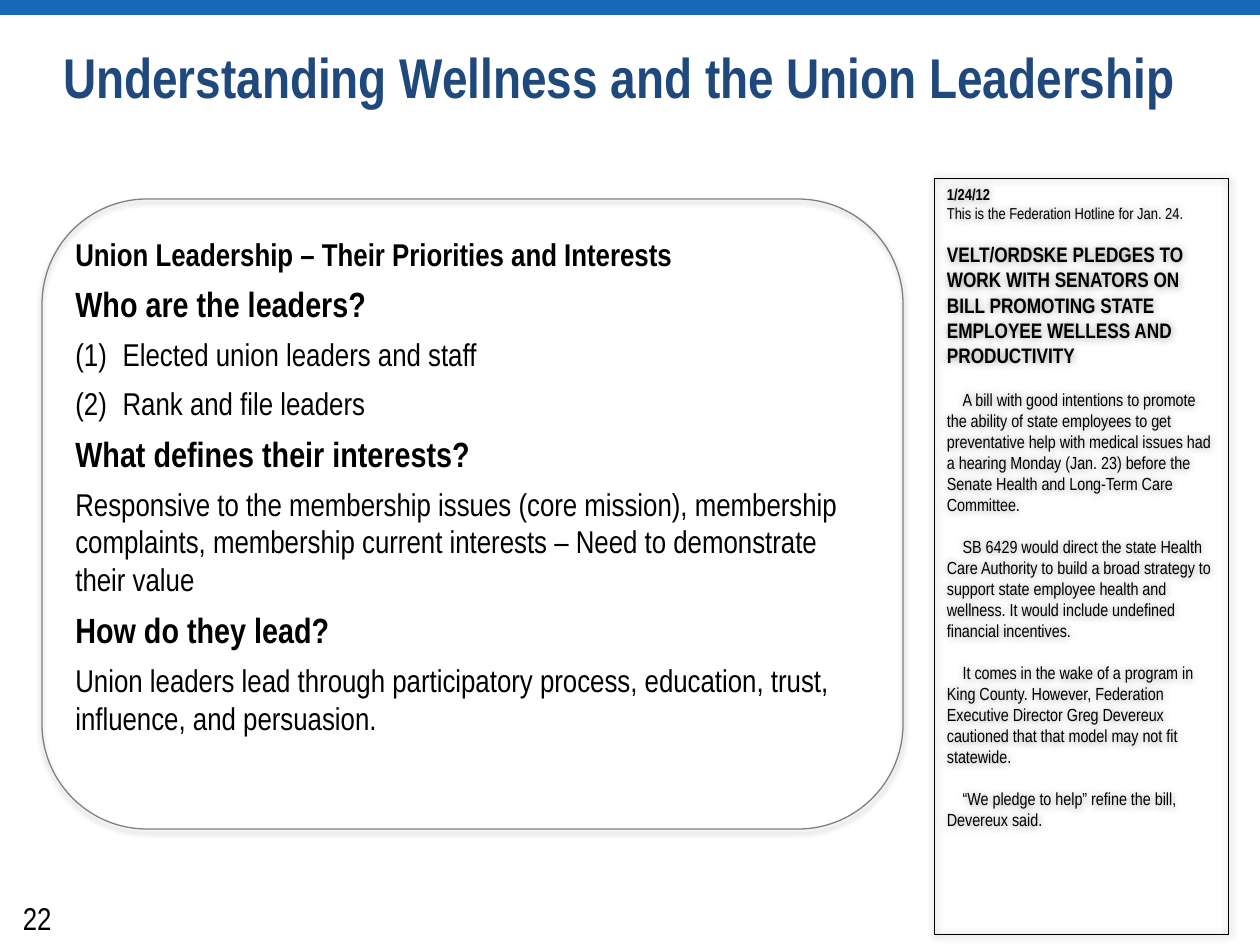
import dataclasses

import lxml.etree
import pptx
import pptx.dml.color
import pptx.enum.shapes
import pptx.enum.text
import pptx.oxml.ns
import pptx.util

Pt = pptx.util.Pt
Kind = pptx.enum.shapes.MSO_SHAPE
Anchor = pptx.enum.text.MSO_ANCHOR
qn = pptx.oxml.ns.qn


@dataclasses.dataclass(frozen=True)
class Theme:
    font: str = "Arial Narrow"
    bar: str = "1769B8"
    title: str = "1F497D"
    ink: str = "000000"
    frame: str = "808080"
    huge: int = 32
    head: int = 20
    body: int = 18
    lead: int = 12
    news: int = 10
    date: int = 9


THEME = Theme()

POINTS = [
    ("Union Leadership – Their Priorities and Interests", dict(bold=True)),
    ("Who are the leaders?", dict(size=THEME.head, bold=True)),
    ("Elected union leaders and staff", dict(number=True)),
    ("Rank and file leaders", dict(number=True)),
    ("What defines their interests?", dict(size=THEME.head, bold=True)),
    ("Responsive to the membership issues (core mission), membership complaints, "
     "membership current interests – Need to demonstrate their value", {}),
    ("How do they lead?", dict(size=THEME.head, bold=True)),
    ("Union leaders lead through participatory process, education, trust, "
     "influence, and persuasion.", {}),
]

STORY = [
    "A bill with good intentions to promote the ability of state employees to get "
    "preventative help with medical issues had a hearing Monday (Jan. 23) before "
    "the Senate Health and Long-Term Care Committee.",
    "SB 6429 would direct the state Health Care Authority to build a broad strategy "
    "to support state employee health and wellness. It would include undefined "
    "financial incentives.",
    "It comes in the wake of a program in King County. However, Federation Executive "
    "Director Greg Devereux cautioned that that model may not fit statewide.",
    "“We pledge to help” refine the bill, Devereux said.",
]


def rgb(code):
    return pptx.dml.color.RGBColor.from_string(code)


def write(frame, text, size=THEME.body, color=THEME.ink, bold=False,
          after=0, lines=None, first=0, number=False):
    """Add one paragraph, using the empty first one if it is still free."""
    para = frame.paragraphs[0]
    if para.runs:
        para = frame.add_paragraph()
    run = para.add_run()
    run.text = text
    run.font.name = THEME.font
    run.font.size = Pt(size)
    run.font.bold = bold
    run.font.color.rgb = rgb(color)
    para.alignment = pptx.enum.text.PP_ALIGN.LEFT
    para.space_after = Pt(after)
    if lines:
        para.line_spacing = lines
    props = para._p.get_or_add_pPr()
    if first:
        props.set("indent", str(Pt(first)))
    if number:
        props.set("marL", str(Pt(27)))
        props.set("indent", str(Pt(-27)))
        lxml.etree.SubElement(props, qn("a:buAutoNum"), type="arabicParenBoth")


def box(slide, area, anchor=Anchor.TOP):
    frame = slide.shapes.add_textbox(*map(Pt, area)).text_frame
    frame.word_wrap = True
    frame.vertical_anchor = anchor
    return frame


def panel(slide, kind, area, fill=None, line=None):
    shape = slide.shapes.add_shape(kind, *map(Pt, area))
    shape.shadow.inherit = False
    if fill:
        shape.fill.solid()
        shape.fill.fore_color.rgb = rgb(fill)
    else:
        shape.fill.background()
    if line:
        shape.line.color.rgb = rgb(line)
        shape.line.width = Pt(0.75)
    else:
        shape.line.fill.background()
    return shape


def shade(shape, alpha, blur, dist=0, angle=0):
    """Give the shape an outer shadow; alpha in percent, angle in degrees."""
    effects = shape._element.spPr.find(qn("a:effectLst"))
    outer = lxml.etree.SubElement(
        effects, qn("a:outerShdw"), blurRad=str(Pt(blur)), dist=str(Pt(dist)),
        dir=str(angle * 60000), rotWithShape="0")
    tint = lxml.etree.SubElement(outer, qn("a:srgbClr"), val=THEME.ink)
    lxml.etree.SubElement(tint, qn("a:alpha"), val=str(alpha * 1000))


def points(slide):
    card = panel(slide, Kind.ROUNDED_RECTANGLE, (24, 113.75, 492, 360),
                 line=THEME.frame)
    shade(card, 35, 3.1, 1.8, 90)
    frame = box(slide, (36, 130.5, 468, 397))
    for text, style in POINTS:
        write(frame, text, after=6, **style)


def hotline(slide):
    card = panel(slide, Kind.RECTANGLE, (534, 102, 168, 432), line=THEME.ink)
    shade(card, 40, 5)
    frame = card.text_frame
    frame.word_wrap = True
    frame.vertical_anchor = Anchor.TOP
    write(frame, "1/24/12", size=THEME.date, bold=True)
    write(frame, "This is the Federation Hotline for Jan. 24.",
          size=THEME.date, after=11)
    write(frame, "VELT/ORDSKE PLEDGES TO WORK WITH SENATORS ON BILL PROMOTING "
          "STATE EMPLOYEE WELLESS AND PRODUCTIVITY",
          size=THEME.lead, bold=True, after=12)
    for text in STORY:
        write(frame, text, size=THEME.news, first=9, after=12)


def main():
    deck = pptx.Presentation()
    deck.slide_width, deck.slide_height = Pt(720), Pt(540)
    slide = deck.slides.add_slide(deck.slide_layouts[6])
    panel(slide, Kind.RECTANGLE, (0, 0, 720, 8.5), fill=THEME.bar)
    write(box(slide, (29, 24, 684, 42.5), Anchor.BOTTOM),
          "Understanding Wellness and the Union Leadership",
          size=THEME.huge, color=THEME.title, bold=True, lines=0.9)
    points(slide)
    hotline(slide)
    write(box(slide, (6, 510, 36.5, 18)), "22")
    deck.save("out.pptx")


if __name__ == "__main__":
    main()
